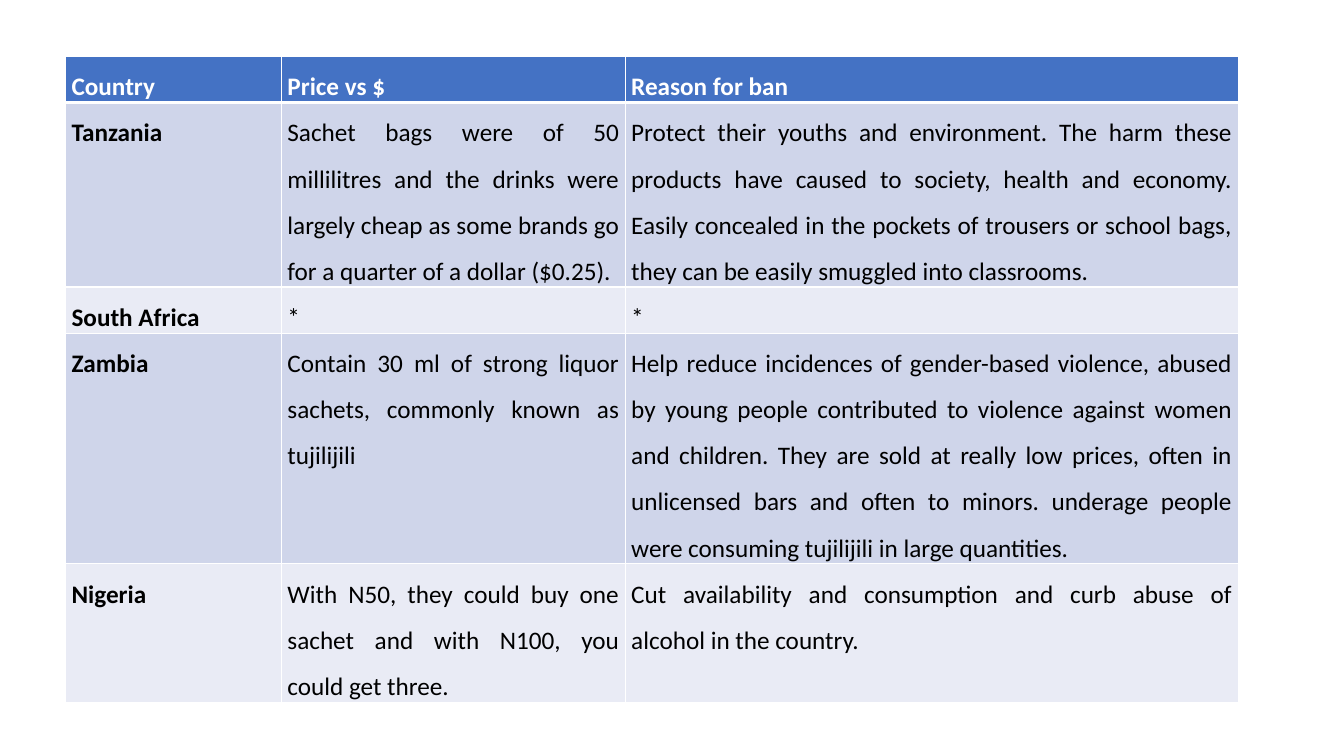
from lxml.etree import SubElement
from pptx import Presentation
from pptx.dml.color import RGBColor
from pptx.enum.text import PP_ALIGN
from pptx.oxml.ns import qn
from pptx.util import Inches, Pt

HEADER = ("Country", "Price vs $", "Reason for ban")
BANS = [
    ("Tanzania",
     "Sachet bags were of 50 millilitres and the drinks were largely cheap as some "
     "brands go for a quarter of a dollar ($0.25). ",
     "Protect their youths and environment. The harm these products have caused to "
     "society, health and economy. Easily concealed in the pockets of trousers or "
     "school bags, they can be easily smuggled into classrooms. "),
    ("South Africa", "*", "*"),
    ("Zambia",
     "Contain 30 ml of strong liquor sachets, commonly known as tujilijili",
     "Help reduce incidences of gender-based violence, abused by young people "
     "contributed to violence against women and children. They are sold at really low "
     "prices, often in unlicensed bars and often to minors. underage people were "
     "consuming tujilijili in large quantities."),
    ("Nigeria ",
     "With N50, they could buy one sachet and with N100, you could get three.",
     "Cut availability and consumption and curb abuse of alcohol in the country."),
]


def color(value):
    return RGBColor.from_string(value)


class Deck:
    """Holds the style and the current slide on a grid of 160 columns by 90 rows."""

    header_fill, bands, rule = "4472C4", ("CFD5EA", "E9EBF5"), "FFFFFF"
    font = {"name": "Calibri", "size": Pt(18)}
    para = {"alignment": PP_ALIGN.JUSTIFY, "line_spacing": 1.5, "space_after": Pt(8)}
    margins = {"margin_left": Inches(0.06), "margin_right": Inches(0.06),
               "margin_top": 0, "margin_bottom": 0}

    def __init__(self):
        self.prs = Presentation()
        self.prs.slide_width, self.prs.slide_height = Inches(13.33), Inches(7.5)
        self.s = self.prs.slides.add_slide(self.prs.slide_layouts[6])

    def x(self, columns):
        return round(self.prs.slide_width * columns / 160)

    def y(self, rows):
        return round(self.prs.slide_height * rows / 90)

    def apply(self, target, values):
        for name, value in values.items():
            setattr(target, name, value)

    def borders(self, cell, top, bottom):
        tcPr = cell._tc.get_or_add_tcPr()
        for tag, width in (("lnL", 1), ("lnR", 1), ("lnT", top), ("lnB", bottom)):
            ln = SubElement(tcPr, qn("a:" + tag), w=str(Pt(width)))
            SubElement(SubElement(ln, qn("a:solidFill")), qn("a:srgbClr"), val=self.rule)

    def cell(self, cell, text, fill, ink, bold):
        self.apply(cell, self.margins)
        cell.fill.solid()
        cell.fill.fore_color.rgb = color(fill)
        p = cell.text_frame.paragraphs[0]
        self.apply(p, self.para)
        r = p.add_run()
        r.text = text
        self.apply(r.font, {**self.font, "bold": bold})
        r.font.color.rgb = color(ink)

    def table(self, left, top, widths, row_height, height, rows):
        frame = self.s.shapes.add_table(
            len(rows), len(widths), self.x(left), self.y(top),
            self.x(sum(widths)), self.y(height))
        table = frame.table
        for column, width in zip(table.columns, widths):
            column.width = self.x(width)
        for i, texts in enumerate(rows):
            table.rows[i].height = self.y(row_height)
            fill = self.bands[(i - 1) % 2] if i else self.header_fill
            for j, text in enumerate(texts):
                cell = table.cell(i, j)
                self.borders(cell, 3 if i == 1 else 1, 1 if i else 3)
                self.cell(cell, text, fill, "000000" if i else "FFFFFF", i == 0 or j == 0)
        frame.height = self.y(height)

    def save(self):
        self.prs.save("out.pptx")


def main():
    deck = Deck()
    deck.table(7.8, 6.72, (25.7, 40.93, 72.98), 4.92, 72.84, [HEADER, *BANS])
    deck.save()


if __name__ == "__main__":
    main()
